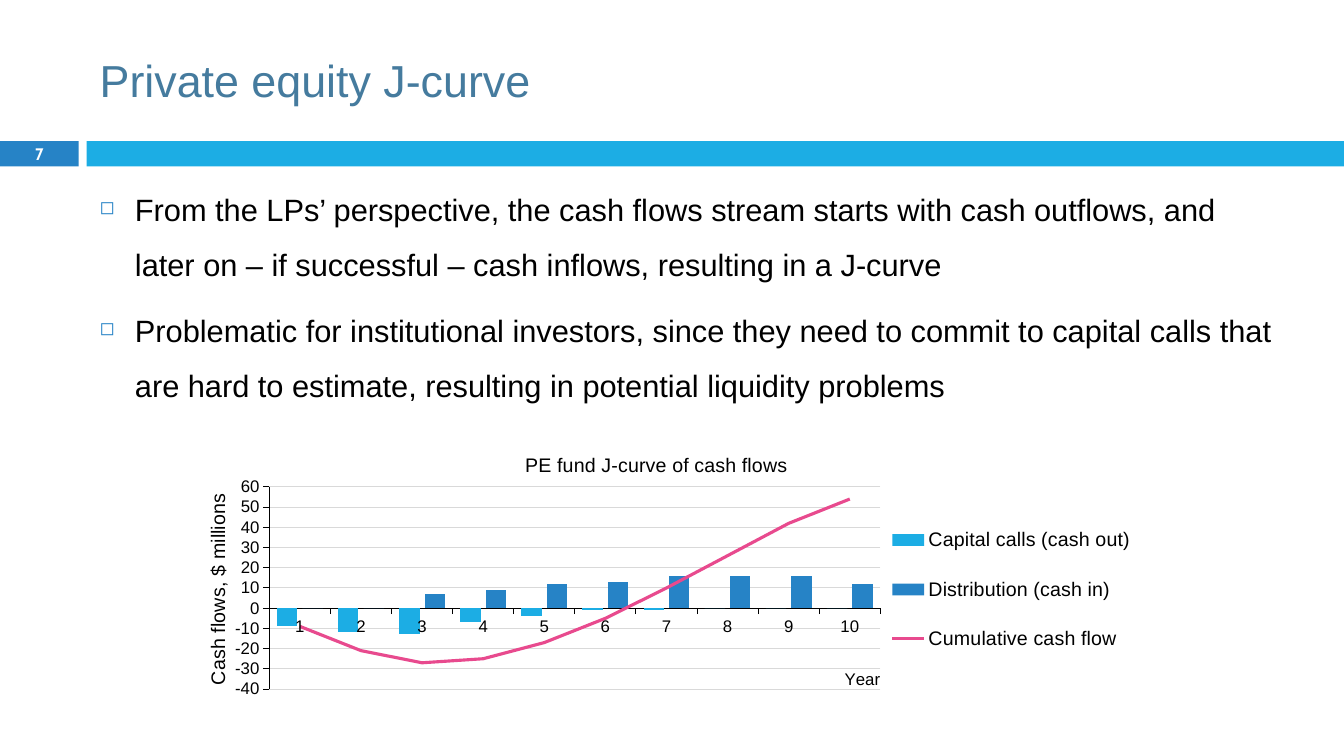
from lxml import etree
from pptx import Presentation, util as u
from pptx.chart.data import CategoryChartData
from pptx.dml.color import RGBColor
from pptx.enum import chart as ch, shapes, text
from pptx.oxml import parse_xml
from pptx.oxml.ns import nsdecls, qn

HUE = {"sky": "1CADE4", "blue": "2683C6", "pink": "E84A8E", "steel": "457B9E",
       "black": "000000", "white": "FFFFFF", "grid": "D9D9D9"}
RGB = {name: RGBColor.from_string(code) for name, code in HUE.items()}
LEFT, WIDE = 0.89, 11.89      # text column
BAR, TAB = 1.4, 0.78          # header band: top, width of number tab


def style(font, size, hue="black", name="Arial", bold=False):
    font.size, font.name, font.bold = u.Pt(size), name, bold
    font.color.rgb = RGB[hue]


def place(node, spot, x, y, w=None, h=None):
    """Give a chart part a fixed layout, in shares of the chart, as child number spot."""
    for old in node.findall(qn("c:layout")):
        node.remove(old)
    lay = parse_xml(f"<c:layout {nsdecls('c')}><c:manualLayout/></c:layout>")
    rules = [("xMode", "edge"), ("yMode", "edge"), ("x", x), ("y", y)]
    if node.tag == qn("c:plotArea"):
        rules.insert(0, ("layoutTarget", "inner"))
    if w:
        rules += [("w", w), ("h", h)]
    for tag, val in rules:
        etree.SubElement(lay[0], qn(f"c:{tag}")).set("val", str(val))
    node.insert(spot, lay)


deck = Presentation()
deck.slide_width, deck.slide_height = u.Inches(13.33), u.Inches(7.5)
slide = deck.slides.add_slide(deck.slide_layouts[6])

# Header band
for x, w, hue in [(0, TAB, "blue"), (0.86, 12.47, "sky")]:
    band = slide.shapes.add_shape(shapes.MSO_SHAPE.RECTANGLE, u.Inches(x), u.Inches(BAR),
                                  u.Inches(w), u.Inches(0.25))
    band.shadow.inherit = False
    band.fill.solid()
    band.fill.fore_color.rgb = RGB[hue]
    band.line.fill.background()

# Title, slide number and body
frames = []
for x, y, w, h in [(LEFT, 0.25, WIDE, 1.08), (0, 1.39, TAB, 0.27), (LEFT, 1.66, WIDE, 2.6)]:
    frame = slide.shapes.add_textbox(*map(u.Inches, (x, y, w, h))).text_frame
    frame.word_wrap = True
    frames.append(frame)
head, num, body = frames

head.text = "Private equity J-curve"
head.vertical_anchor = num.vertical_anchor = text.MSO_ANCHOR.MIDDLE
style(head.paragraphs[0].font, 32, "steel")

num.text = "7"
num.margin_top = num.margin_bottom = 0
num.paragraphs[0].alignment = text.PP_ALIGN.CENTER
style(num.paragraphs[0].font, 11.9, "white", "Cabin", True)

body.text = "\n".join([
    "From the LPs’ perspective, the cash flows stream starts with cash outflows, and "
    "later on – if successful – cash inflows, resulting in a J-curve",
    "Problematic for institutional investors, since they need to commit to capital calls "
    "that are hard to estimate, resulting in potential liquidity problems"])
for para in body.paragraphs:
    props = para._p.get_or_add_pPr()
    props.set("marL", str(u.Inches(0.35)))
    props.set("indent", str(-u.Inches(0.35)))
    for bit in (f'<a:buClr {nsdecls("a")}><a:srgbClr val="{HUE["blue"]}"/></a:buClr>',
                f'<a:buSzPct {nsdecls("a")} val="60000"/>',
                f'<a:buChar {nsdecls("a")} char="◻"/>'):
        props.append(parse_xml(bit))
    para.line_spacing, para.space_before = 1.5, u.Pt(7)
    style(para.font, 22)

# Chart data
data = CategoryChartData()
data.categories = [str(year) for year in range(1, 11)]
data.add_series("Capital calls (cash out)", [-9, -12, -13, -7, -4, -1, -1, 0, 0, 0])
data.add_series("Distribution (cash in)", [0, 0, 7, 9, 12, 13, 16, 16, 16, 12])
data.add_series("Cumulative cash flow", [-9, -21, -27, -25, -17, -5, 10, 26, 42, 54])
chart = slide.shapes.add_chart(ch.XL_CHART_TYPE.COLUMN_CLUSTERED, u.Inches(1.71), u.Inches(4.3),
                               u.Inches(9.62), u.Inches(2.95), data).chart
style(chart.font, 12)

# The third series becomes a line on the same axes
space = chart._chartSpace
bars = space.find(".//" + qn("c:barChart"))
curve = bars.findall(qn("c:ser"))[2]
for flag in curve.findall(qn("c:invertIfNegative")):
    curve.remove(flag)
line = parse_xml(f'<c:lineChart {nsdecls("c")}><c:grouping val="standard"/>'
                 '<c:varyColors val="0"/><c:marker val="1"/></c:lineChart>')
line.insert(2, curve)
for axis in bars.findall(qn("c:axId")):
    etree.SubElement(line, qn("c:axId")).set("val", axis.get("val"))
bars.addnext(line)

cols, trend = chart.plots
cols.gap_width, cols.overlap, cols.vary_by_categories = 75, -25, False
for ser, hue in zip(cols.series, ("sky", "blue")):
    ser.format.fill.solid()
    ser.format.fill.fore_color.rgb = RGB[hue]
    ser.invert_if_negative = False
total = trend.series[0]
total.smooth = False
total.marker.style = ch.XL_MARKER_STYLE.NONE
total.format.line.color.rgb, total.format.line.width = RGB["pink"], u.Pt(2.25)

# Axes, titles and legend
years, cash = chart.category_axis, chart.value_axis
cash.minimum_scale, cash.maximum_scale, cash.major_unit = -40, 60, 10
cash.has_major_gridlines = True
rule = cash.major_gridlines.format.line
rule.color.rgb, rule.width = RGB["grid"], u.Pt(0.75)
for axis in (years, cash):
    axis.major_tick_mark = ch.XL_TICK_MARK.OUTSIDE
    axis.minor_tick_mark = ch.XL_TICK_MARK.NONE
    axis.format.line.color.rgb, axis.format.line.width = RGB["black"], u.Pt(0.75)
    style(axis.tick_labels.font, 12)

for title, words, size, x, y in [
        (chart.chart_title, "PE fund J-curve of cash flows", 14, 0.36, 0.05),
        (years.axis_title, "Year", 12, 0.69, 0.78),
        (cash.axis_title, "Cash flows, $ millions", 14, 0.03, 0.19)]:
    title.text_frame.text = words
    style(title.text_frame.paragraphs[0].runs[0].font, size)
    place(title._element, 1, x, y)
turn = cash.axis_title._element.find(".//" + qn("a:bodyPr"))
turn.set("rot", "-5400000")
turn.set("vert", "horz")

chart.has_legend = True
chart.legend.position = ch.XL_LEGEND_POSITION.RIGHT
chart.legend.include_in_layout = False
style(chart.legend.font, 14)
place(space.find(".//" + qn("c:legend")), 1, 0.74, 0.23, 0.25, 0.59)
place(space.find(".//" + qn("c:plotArea")), 0, 0.1, 0.18, 0.63, 0.68)

deck.save("out.pptx")
